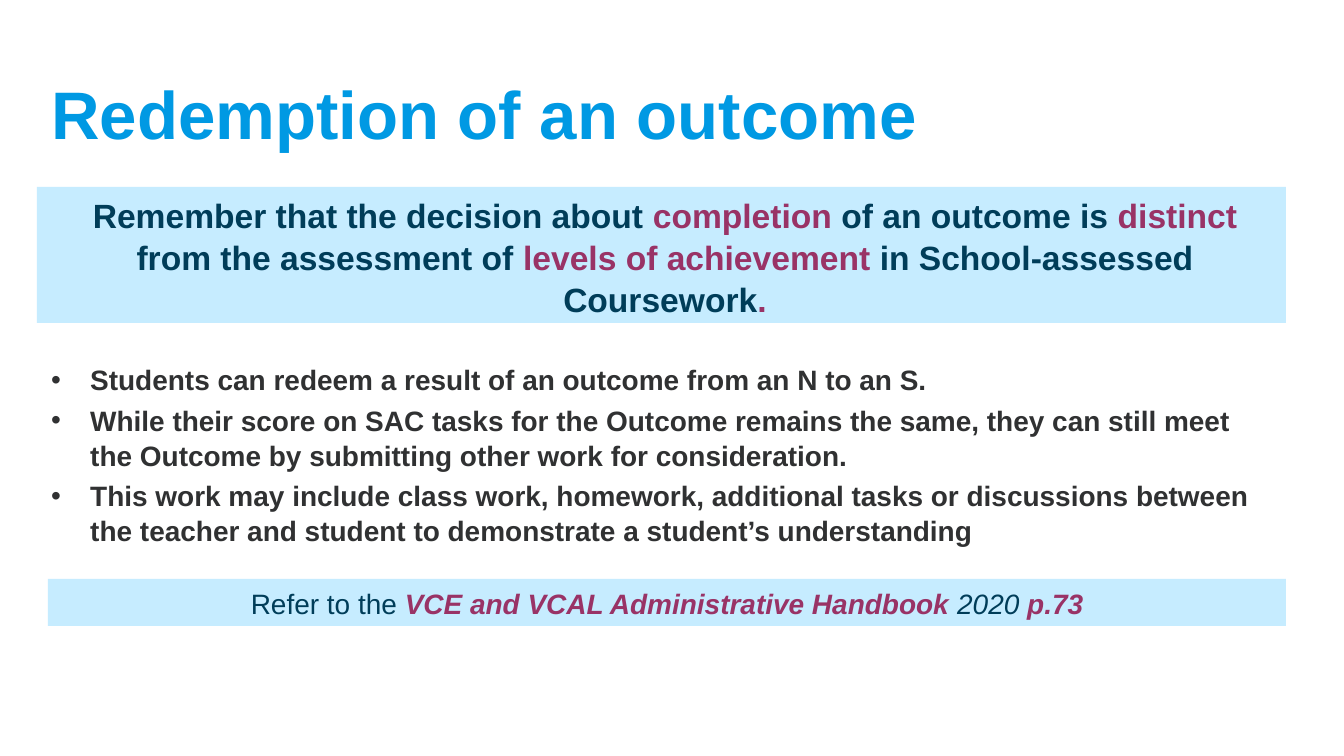
from lxml.etree import SubElement
from pptx import Presentation
from pptx.dml.color import RGBColor
from pptx.enum.shapes import MSO_SHAPE
from pptx.enum.text import MSO_ANCHOR, PP_ALIGN
from pptx.oxml.ns import qn
from pptx.util import Pt

PX = 914400 / 134.4
COLORS = {"blue": "0099E3", "pale": "C6ECFF", "navy": "003D59",
          "plum": "993366", "ink": "303132"}


def px(length):
    return round(length * PX)


def set_font(font, size, color, bold=None):
    font.name = "Arial"
    font.size = Pt(size)
    font.bold = bold
    font.color.rgb = RGBColor.from_string(COLORS[color])


deck = Presentation()
deck.slide_width, deck.slide_height = px(1344), px(756)
page = deck.slides.add_slide(deck.slide_layouts[6])

# Title
title = page.shapes.add_textbox(px(38), px(50), px(1281), px(126)).text_frame
title.word_wrap = True
title.vertical_anchor = MSO_ANCHOR.MIDDLE
title.text = "Redemption of an outcome"
set_font(title.paragraphs[0].font, 36, "blue", True)

# Bullet list
points = [
    "Students can redeem a result of an outcome from an N to an S.",
    "While their score on SAC tasks for the Outcome remains the same, they can "
    "still meet the Outcome by submitting other work for consideration.",
    "This work may include class work, homework, additional tasks or discussions "
    "between the teacher and student to demonstrate a student’s understanding",
]
body = page.shapes.add_textbox(px(38), px(355), px(1249), px(298)).text_frame
body.word_wrap = True
for index, point in enumerate(points):
    para = body.paragraphs[0] if index == 0 else body.add_paragraph()
    para.text = point
    if index:
        para.space_before = Pt(3)
    para.line_spacing = 1.04
    props = para._p.get_or_add_pPr()
    props.set("marL", str(px(39)))
    props.set("indent", str(-px(39)))
    SubElement(props, qn("a:buFont")).set("typeface", "Arial")
    SubElement(props, qn("a:buChar")).set("char", "•")
    set_font(para.font, 15, "ink", True)

# Highlighted bands: left, top, width, height, size, left margin, all bold, spans
bands = [
    (37, 187, 1249, 136, 18, 7, True, [
        ("Remember that the decision about ", "navy"),
        ("completion", "plum"),
        (" of an outcome is ", "navy"),
        ("distinct", "plum"),
        (" from the assessment of ", "navy"),
        ("levels of achievement ", "plum"),
        ("in School-assessed Coursework", "navy"),
        (".", "plum"),
    ]),
    (48, 579, 1238, 47, 15, 0, False, [
        ("Refer to the ", "navy"),
        ("VCE and VCAL Administrative Handbook ", "plum"),
        ("2020 ", "navy"),
        ("p.73", "plum"),
    ]),
]
for left, top, width, height, size, margin, all_bold, spans in bands:
    band = page.shapes.add_shape(MSO_SHAPE.RECTANGLE, px(left), px(top), px(width), px(height))
    band.shadow.inherit = False
    band.fill.solid()
    band.fill.fore_color.rgb = RGBColor.from_string(COLORS["pale"])
    band.line.fill.background()
    frame = band.text_frame
    frame.word_wrap = True
    frame.vertical_anchor = MSO_ANCHOR.TOP
    para = frame.paragraphs[0]
    para.alignment = PP_ALIGN.CENTER
    para.line_spacing = 1.04
    para._p.get_or_add_pPr().set("marL", str(px(margin)))
    for index, (text, color) in enumerate(spans):
        span = para.add_run()
        span.text = text
        set_font(span.font, size, color, all_bold or color == "plum")
        if not all_bold and index:
            span.font.italic = True

deck.save("out.pptx")
